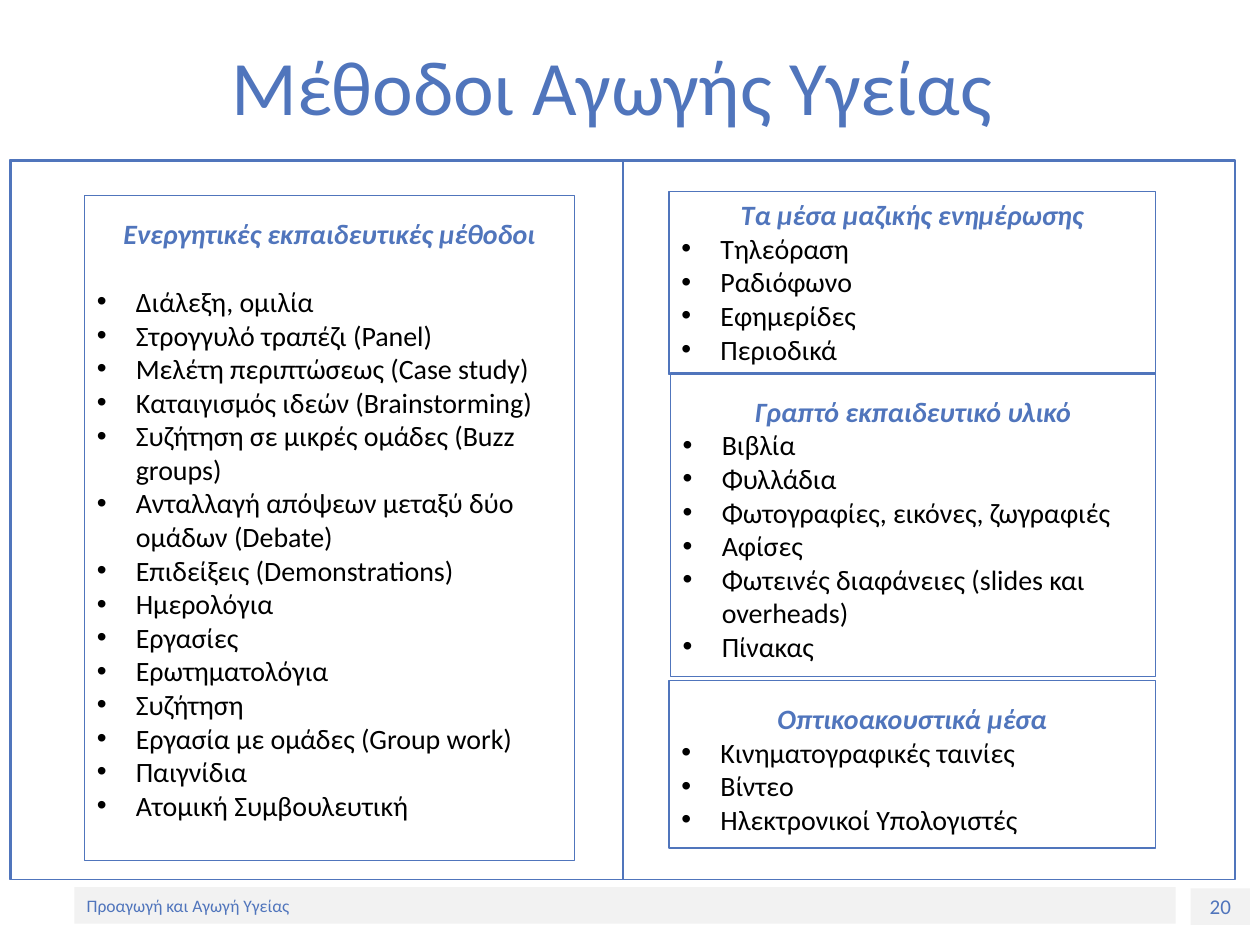
from lxml import etree
from pptx import Presentation
from pptx.dml.color import RGBColor
from pptx.enum import shapes, text
from pptx.oxml import ns
from pptx.util import Inches, Pt

BLUE = RGBColor(0x50, 0x75, 0xBC)
BLACK = RGBColor(0, 0, 0)
GREY = RGBColor(0xF2, 0xF2, 0xF2)
FONT = "Calibri"
INDENT = Inches(0.31)
LINE_HEIGHT = 19.5  # points, one line of 16 pt text

# Content
TITLE = "Μέθοδοι Αγωγής Υγείας"
FOOTER = "Προαγωγή και Αγωγή Υγείας"
PAGE_NUMBER = "20"

# Each panel: box, top inset, gap below heading, heading, items
PANELS = [
    ((0.67, 1.55, 3.89, 5.28), 0.17, LINE_HEIGHT, "Ενεργητικές εκπαιδευτικές μέθοδοι", [
        "Διάλεξη, ομιλία",
        "Στρογγυλό τραπέζι (Panel)",
        "Μελέτη περιπτώσεως (Case study)",
        "Καταιγισμός ιδεών (Brainstorming)",
        "Συζήτηση σε μικρές ομάδες (Buzz groups)",
        "Ανταλλαγή απόψεων μεταξύ δύο ομάδων (Debate)",
        "Επιδείξεις (Demonstrations)",
        "Ημερολόγια",
        "Εργασίες",
        "Ερωτηματολόγια",
        "Συζήτηση",
        "Εργασία με ομάδες (Group work)",
        "Παιγνίδια",
        "Ατομική Συμβουλευτική",
    ]),
    ((5.31, 1.52, 3.86, 1.45), 0.05, 0, "Τα μέσα μαζικής ενημέρωσης", [
        "Τηλεόραση", "Ραδιόφωνο", "Εφημερίδες", "Περιοδικά",
    ]),
    ((5.32, 2.96, 3.85, 2.41), 0.17, 0, "Γραπτό εκπαιδευτικό υλικό", [
        "Βιβλία",
        "Φυλλάδια",
        "Φωτογραφίες, εικόνες, ζωγραφιές",
        "Αφίσες",
        "Φωτεινές διαφάνειες (slides και overheads)",
        "Πίνακας",
    ]),
    ((5.31, 5.4, 3.86, 1.33), 0.17, 0, "Οπτικοακουστικά μέσα", [
        "Κινηματογραφικές ταινίες", "Βίντεο", "Ηλεκτρονικοί Υπολογιστές",
    ]),
]

# Frame around both columns, then one frame per column: box, line width
FRAMES = [
    ((0.09, 1.28, 4.86, 5.7), 0),
    ((4.94, 1.28, 4.86, 5.7), 0),
    ((0.08, 1.27, 9.72, 5.71), 0.87),
]


def add_box(slide, box, fill=None, line_width=None):
    rect = slide.shapes.add_shape(shapes.MSO_SHAPE.RECTANGLE, *map(Inches, box))
    rect.shadow.inherit = False
    if fill is None:
        rect.fill.background()
    else:
        rect.fill.solid()
        rect.fill.fore_color.rgb = fill
    if line_width is None:
        rect.line.fill.background()
    else:
        rect.line.color.rgb = BLUE
        rect.line.width = Pt(line_width)
    return rect


def add_run(paragraph, words, size, color=BLUE, emphasis=False):
    run = paragraph.add_run()
    run.text = words
    font = run.font
    font.name, font.size, font.color.rgb = FONT, Pt(size), color
    font.bold = font.italic = emphasis


def add_bullet(paragraph):
    props = paragraph._p.get_or_add_pPr()
    props.set("marL", str(INDENT))
    props.set("indent", str(-INDENT))
    etree.SubElement(props, ns.qn("a:buFont"), typeface="Arial")
    etree.SubElement(props, ns.qn("a:buChar"), char="•")


def add_panel(slide, box, top_inset, heading_gap, heading, items):
    frame = add_box(slide, box, line_width=0.75).text_frame
    frame.word_wrap = True
    frame.vertical_anchor = text.MSO_ANCHOR.TOP
    frame.margin_top = Inches(top_inset)
    frame.margin_bottom = Inches(0.08 if top_inset > 0.05 else 0.05)

    first = frame.paragraphs[0]
    first.alignment = text.PP_ALIGN.CENTER
    first.space_after = Pt(heading_gap)
    add_run(first, heading, 16, emphasis=True)
    for item in items:
        paragraph = frame.add_paragraph()
        paragraph.alignment = text.PP_ALIGN.LEFT
        add_bullet(paragraph)
        add_run(paragraph, item, 16, BLACK)


def add_footer(slide, box, words, size, alignment):
    frame = add_box(slide, box, fill=GREY).text_frame
    frame.word_wrap = True
    frame.vertical_anchor = text.MSO_ANCHOR.MIDDLE
    frame.paragraphs[0].alignment = alignment
    add_run(frame.paragraphs[0], words, size)


def main():
    deck = Presentation()
    deck.slide_width, deck.slide_height = Inches(10), Inches(7.5)
    slide = deck.slides.add_slide(deck.slide_layouts[5])

    # Footer bar and page number
    add_footer(slide, (9.45, 7.05, 0.47, 0.29), PAGE_NUMBER, 12, text.PP_ALIGN.CENTER)
    add_footer(slide, (0.59, 7.04, 8.74, 0.29), FOOTER, 10, text.PP_ALIGN.LEFT)

    # Title, set slightly left of centre by its right inset
    title = slide.shapes.title
    title.left, title.top, title.width, title.height = map(Inches, (0.5, 0.05, 9, 1.25))
    title.text_frame.margin_right = Inches(0.38)
    title.text_frame.vertical_anchor = text.MSO_ANCHOR.MIDDLE
    title.text_frame.paragraphs[0].alignment = text.PP_ALIGN.CENTER
    add_run(title.text_frame.paragraphs[0], TITLE, 44)

    # Method panels and the frames around them
    for panel in PANELS:
        add_panel(slide, *panel)
    for box, width in FRAMES:
        add_box(slide, box, line_width=width)

    deck.save("out.pptx")


if __name__ == "__main__":
    main()
